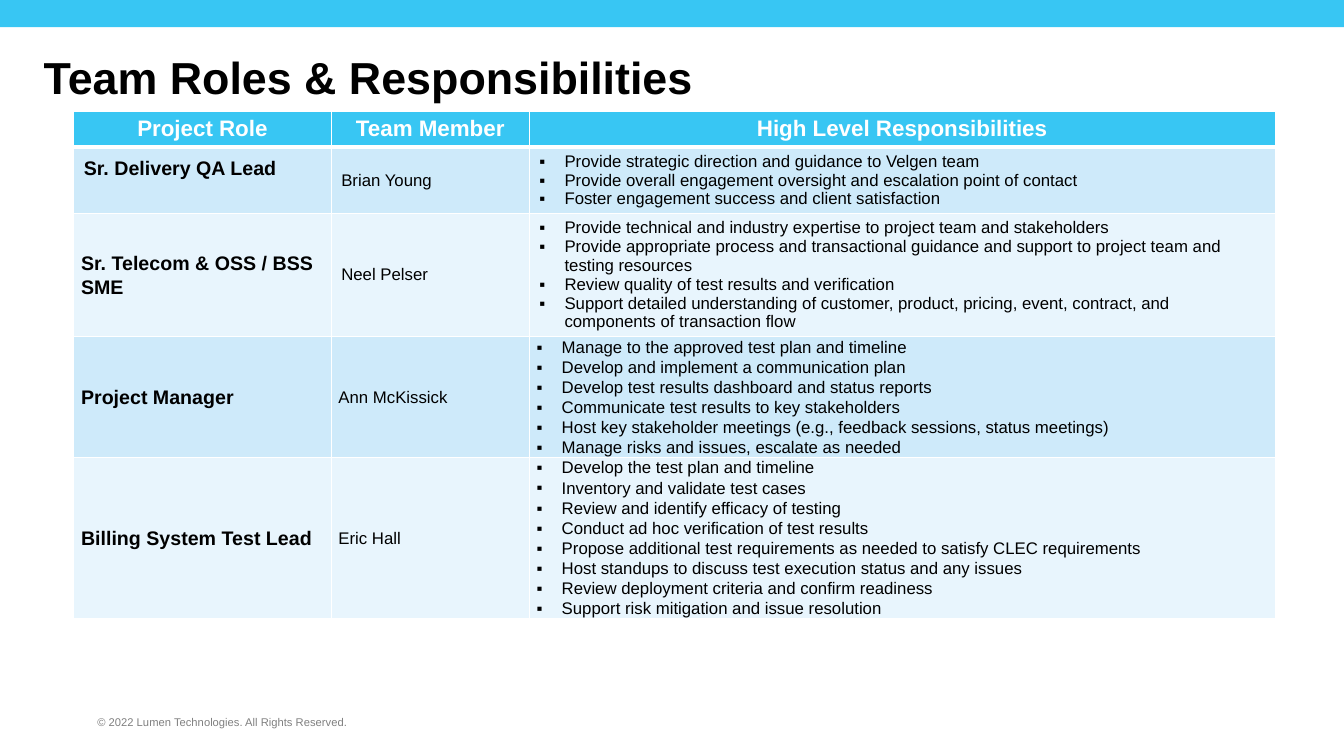
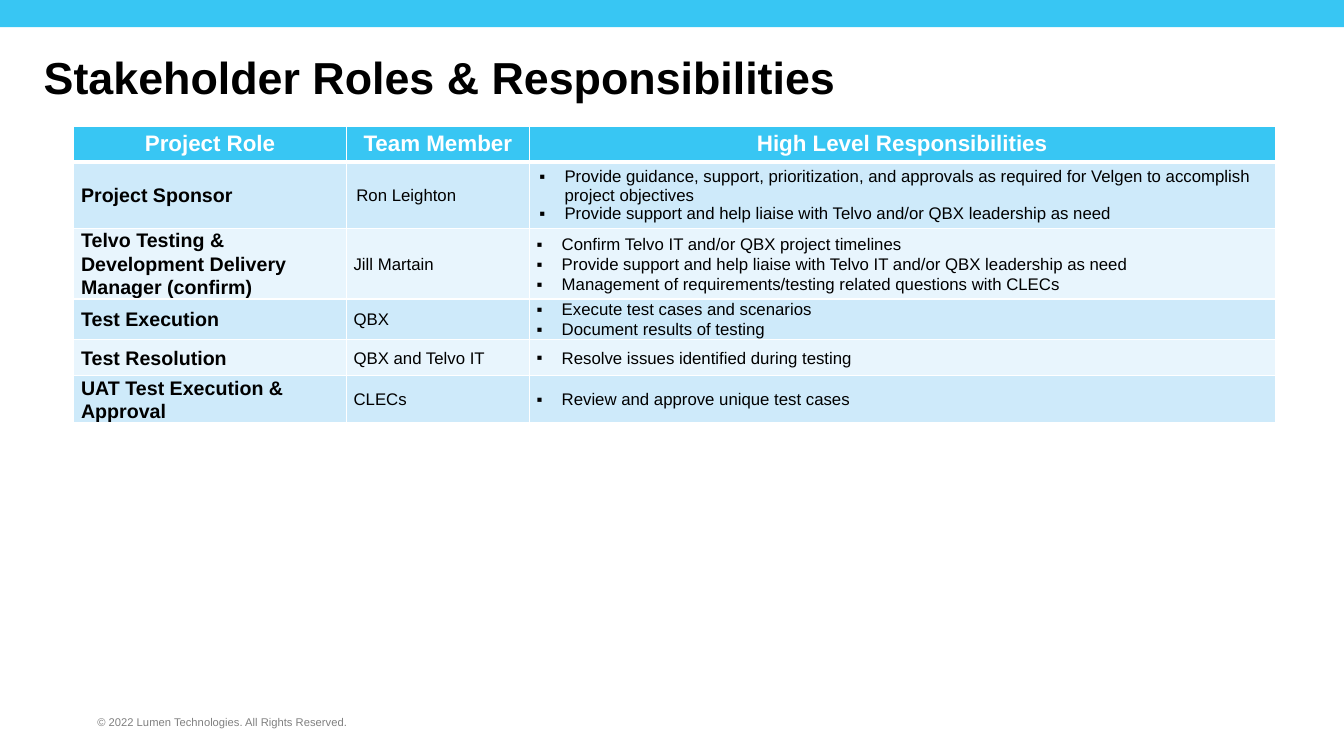
from lxml import etree
from pptx import Presentation
from pptx.dml.color import RGBColor
from pptx.enum import shapes, text
from pptx.oxml import ns
from pptx.util import Pt

# Shared look
COLORS = {"band": "38C6F3", "dark_row": "CEEAFA", "light_row": "E8F5FD",
          "ink": "000000", "white": "FFFFFF", "footer": "808080"}
FONT = "Arial"
FOOTER = "© 2022 Lumen Technologies. All Rights Reserved."
HEADERS = ["Project Role", "Team Member", "High Level Responsibilities"]
SLIDE_WIDTH, SLIDE_HEIGHT = 960, 540
TABLE_LEFT = 52.7
HEADER_HEIGHT = 25.6
BULLET_INDENT = 18

# Cell styles: margins are left, top, right, bottom
LOOSE = {"margins": (7.2, 3.6, 7.2, 3.6), "spacing": 1.0}
TIGHT = {"margins": (5.2, 0, 5.2, 0), "spacing": 1.07}
RAISED = {"margins": (7.2, 3.6, 7.2, 20), "spacing": 1.0}

# Rows: role, member, responsibilities, row height, role style, style of the rest
SLIDES = [
    {"title": "Team Roles & Responsibilities", "top": 79.4,
     "columns": (183.9, 141.5, 532.8),
     "rows": [
         ("Sr. Delivery QA Lead", "Brian Young", [
             "Provide strategic direction and guidance to Velgen team",
             "Provide overall engagement oversight and escalation point of contact",
             "Foster engagement success and client satisfaction",
         ], 47, RAISED, LOOSE),
         ("Sr. Telecom & OSS / BSS SME", "Neel Pelser", [
             "Provide technical and industry expertise to project team and stakeholders",
             "Provide appropriate process and transactional guidance and support to "
             "project team and testing resources",
             "Review quality of test results and verification",
             "Support detailed understanding of customer, product, pricing, event, "
             "contract, and components of transaction flow",
         ], 87.5, TIGHT, LOOSE),
         ("Project Manager", "Ann McKissick", [
             "Manage to the approved test plan and timeline",
             "Develop and implement a communication plan",
             "Develop test results dashboard and status reports",
             "Communicate test results to key stakeholders",
             "Host key stakeholder meetings (e.g., feedback sessions, status meetings)",
             "Manage risks and issues, escalate as needed",
         ], 86, TIGHT, TIGHT),
         ("Billing System Test Lead", "Eric Hall", [
             "Develop the test plan and timeline",
             "Inventory and validate test cases",
             "Review and identify efficacy of testing",
             "Conduct ad hoc verification of test results",
             "Propose additional test requirements as needed to satisfy CLEC requirements",
             "Host standups to discuss test execution status and any issues",
             "Review deployment criteria and confirm readiness",
             "Support risk mitigation and issue resolution",
         ], 114.5, TIGHT, TIGHT),
     ]},
    {"title": "Stakeholder Roles & Responsibilities", "top": 90,
     "columns": (194.7, 130.7, 532.8),
     "rows": [
         ("Project Sponsor", "Ron Leighton", [
             "Provide guidance, support, prioritization, and approvals as required "
             "for Velgen to accomplish project objectives",
             "Provide support and help liaise with Telvo and/or QBX leadership as need",
         ], 47, TIGHT, LOOSE),
         ("Telvo Testing & Development Delivery Manager (confirm)", "Jill Martain", [
             "Confirm Telvo IT and/or QBX project timelines",
             "Provide support and help liaise with Telvo IT and/or QBX leadership as need",
             "Management of requirements/testing related questions with CLECs",
         ], 50, TIGHT, TIGHT),
         ("Test Execution", "QBX", [
             "Execute test cases and scenarios",
             "Document results of testing",
         ], 28.7, TIGHT, TIGHT),
         ("Test Resolution", "QBX and Telvo IT", [
             "Resolve issues identified during testing",
         ], 26, TIGHT, TIGHT),
         ("UAT Test Execution & Approval", "CLECs", [
             "Review and approve unique test cases",
         ], 33.5, TIGHT, TIGHT),
     ]},
]


def rgb(name):
    return RGBColor.from_string(COLORS[name])


def add_run(paragraph, words, size, color="ink", bold=False):
    run = paragraph.add_run()
    run.text = words
    run.font.name = FONT
    run.font.size = Pt(size)
    run.font.bold = bold
    run.font.color.rgb = rgb(color)


def add_bullet(paragraph):
    properties = paragraph._p.get_or_add_pPr()
    properties.set("marL", str(Pt(BULLET_INDENT)))
    properties.set("indent", str(-Pt(BULLET_INDENT)))
    etree.SubElement(properties, ns.qn("a:buFont")).set("typeface", FONT)
    etree.SubElement(properties, ns.qn("a:buChar")).set("char", "▪")


def add_borders(cell, top, bottom):
    properties = cell._tc.get_or_add_tcPr()
    for side, width in (("L", 1), ("R", 1), ("T", top), ("B", bottom)):
        line = etree.SubElement(properties, ns.qn("a:ln" + side), w=str(Pt(width)))
        fill = etree.SubElement(line, ns.qn("a:solidFill"))
        etree.SubElement(fill, ns.qn("a:srgbClr"), val=COLORS["white"])


def fill_cell(cell, lines, style, fill, size, color="ink", bold=False,
              bullets=False, alignment=text.PP_ALIGN.LEFT, top=1, bottom=1):
    add_borders(cell, top, bottom)
    cell.fill.solid()
    cell.fill.fore_color.rgb = rgb(fill)
    cell.vertical_anchor = text.MSO_ANCHOR.MIDDLE
    (cell.margin_left, cell.margin_top,
     cell.margin_right, cell.margin_bottom) = map(Pt, style["margins"])
    frame = cell.text_frame
    for index, line in enumerate(lines):
        paragraph = frame.add_paragraph() if index else frame.paragraphs[0]
        if bullets:
            add_bullet(paragraph)
        paragraph.alignment = alignment
        paragraph.line_spacing = style["spacing"]
        add_run(paragraph, line, size, color, bold)


def add_roles_table(slide, content):
    rows, columns = content["rows"], content["columns"]
    heights = [HEADER_HEIGHT] + [row[3] for row in rows]
    table = slide.shapes.add_table(
        len(heights), len(columns), Pt(TABLE_LEFT), Pt(content["top"]),
        Pt(sum(columns)), Pt(sum(heights))).table
    for column, width in zip(table.columns, columns):
        column.width = Pt(width)
    for row, height in zip(table.rows, heights):
        row.height = Pt(height)

    for index, header in enumerate(HEADERS):
        fill_cell(table.cell(0, index), [header], LOOSE, "band", 16, "white", True,
                  alignment=text.PP_ALIGN.CENTER, bottom=3)
    for index, (role, member, duties, _, role_style, style) in enumerate(rows, 1):
        fill = "dark_row" if index % 2 else "light_row"
        top = 3 if index == 1 else 1
        fill_cell(table.cell(index, 0), [role], role_style, fill, 14, bold=True, top=top)
        fill_cell(table.cell(index, 1), [member], style, fill, 12, top=top)
        fill_cell(table.cell(index, 2), duties, style, fill, 12, bullets=True, top=top)


def set_up_layout(layout, slide):
    """Place the title and move the band and footer into the layout."""
    title = layout.placeholders[0]
    title.left, title.top, title.width, title.height = map(Pt, (24, 24.5, 864, 65.5))

    band = slide.shapes.add_shape(shapes.MSO_SHAPE.RECTANGLE, 0, 0,
                                  Pt(SLIDE_WIDTH), Pt(19.4))
    band.shadow.inherit = False
    band.fill.solid()
    band.fill.fore_color.rgb = rgb("band")
    band.line.fill.background()

    footer = slide.shapes.add_textbox(Pt(69.5), Pt(507.6), Pt(312.5), Pt(17))
    frame = footer.text_frame
    frame.word_wrap = True
    frame.margin_left = 0
    add_run(frame.paragraphs[0], FOOTER, 8, "footer")

    for shape in (band, footer):
        layout.shapes.element.append(shape.element)


def add_title(slide, words):
    frame = slide.shapes.title.text_frame
    frame.auto_size = text.MSO_AUTO_SIZE.NONE
    frame.vertical_anchor = text.MSO_ANCHOR.MIDDLE
    paragraph = frame.paragraphs[0]
    paragraph.alignment = text.PP_ALIGN.LEFT
    paragraph.line_spacing = 0.9
    add_run(paragraph, words, 32, bold=True)


def main():
    presentation = Presentation()
    presentation.slide_width = Pt(SLIDE_WIDTH)
    presentation.slide_height = Pt(SLIDE_HEIGHT)
    layout = presentation.slide_layouts[5]
    for index, content in enumerate(SLIDES):
        slide = presentation.slides.add_slide(layout)
        if index == 0:
            set_up_layout(layout, slide)
        add_title(slide, content["title"])
        add_roles_table(slide, content)
    presentation.save("out.pptx")


if __name__ == "__main__":
    main()
